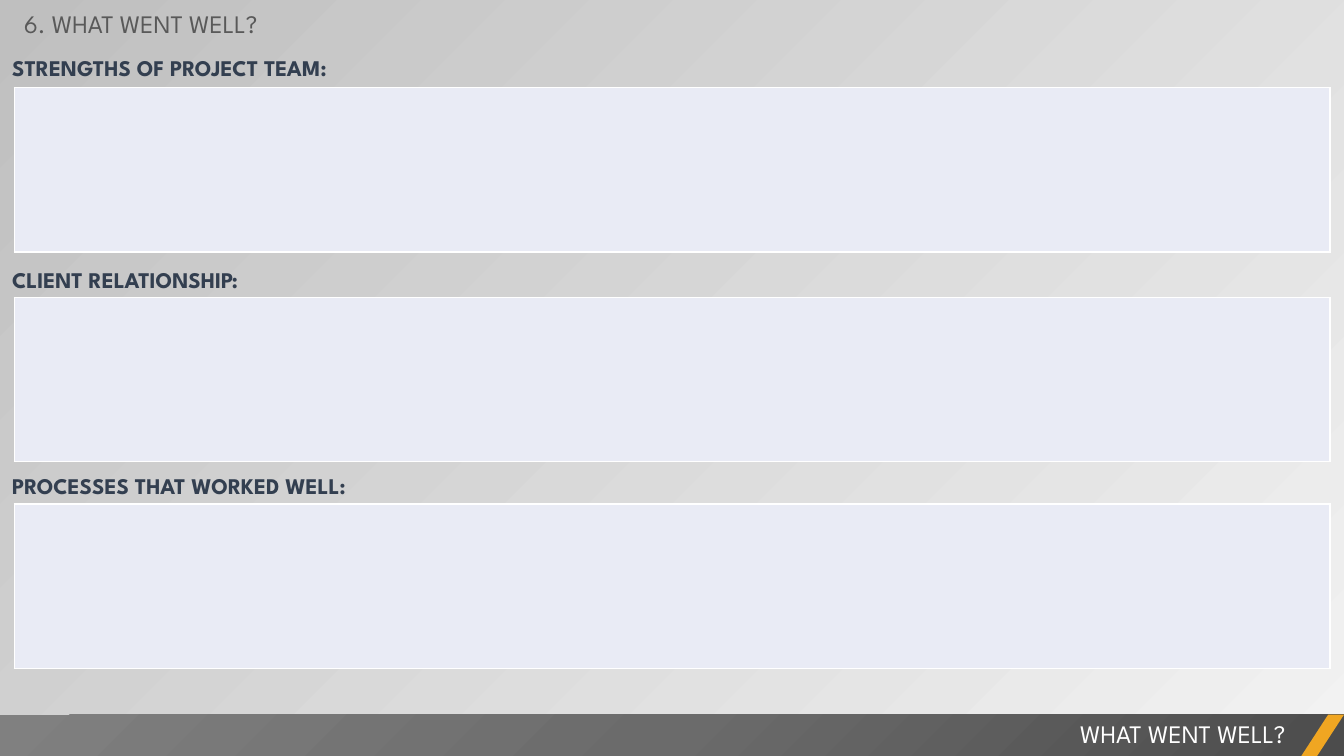
"""Build the "What went well?" slide: three titled answer boxes above a footer bar."""
from lxml import etree
from pptx import Presentation
from pptx.dml.color import RGBColor
from pptx.enum.shapes import MSO_SHAPE
from pptx.enum.text import MSO_AUTO_SIZE, PP_ALIGN
from pptx.oxml import parse_xml
from pptx.oxml.ns import nsdecls, qn
from pptx.util import Inches, Pt

RECTANGLE = MSO_SHAPE.RECTANGLE
PARALLELOGRAM = MSO_SHAPE.PARALLELOGRAM
GROW = MSO_AUTO_SIZE.SHAPE_TO_FIT_TEXT
LEFT, RIGHT = PP_ALIGN.LEFT, PP_ALIGN.RIGHT

FONT = "League Spartan"
NAVY = RGBColor(0x33, 0x3F, 0x50)
GRAY = RGBColor(0x59, 0x59, 0x59)
WHITE = RGBColor(0xFF, 0xFF, 0xFF)
PALE_BLUE = RGBColor(0xE9, 0xEB, 0xF5)
AMBER = RGBColor(0xF0, 0xA6, 0x22)

SLIDE_WIDTH, SLIDE_HEIGHT = 13.33, 7.5
BOX_LEFT, BOX_WIDTH, BOX_HEIGHT = 0.14, 13.05, 1.63
FOOTER_TOP, FOOTER_HEIGHT = 7.09, 0.42
STRIPE_WIDTH = 0.43

TITLE = "6. WHAT WENT WELL?"
FOOTER = "WHAT WENT WELL?"
SECTIONS = [
    ("STRENGTHS OF PROJECT TEAM:", 0.45, 0.87, Pt(21.5)),
    ("CLIENT RELATIONSHIP:", 2.55, 2.95, Pt(21.5)),
    ("PROCESSES THAT WORKED WELL:", 4.57, 5.0, 1.2),
]
BACKGROUND_STOPS = [(0, "F2F2F2", 40), (100, "BFBFBF", 100)]
BACKGROUND_DIRECTION = '<a:lin ang="13500000" scaled="0"/>'
FOOTER_STOPS = [(0, "4C4C4C", 100), (50, "6B6B6B", 100), (100, "808080", 100)]
FOOTER_DIRECTION = '<a:path path="circle"><a:fillToRect l="100000" t="100000"/></a:path>'


def set_gradient(fill, element, stops, direction):
    fill.gradient()
    stop_xml = "".join(
        f'<a:gs pos="{position * 1000}"><a:srgbClr val="{color}">'
        f'<a:alpha val="{opacity * 1000}"/></a:srgbClr></a:gs>'
        for position, color, opacity in stops
    )
    gradient = parse_xml(
        f'<a:gradFill {nsdecls("a")} rotWithShape="1"><a:gsLst>{stop_xml}</a:gsLst>{direction}</a:gradFill>'
    )
    default = next(element.iter(qn("a:gradFill")))
    default.getparent().replace(default, gradient)


def add_text(slide, text, left, top, width, size, color, align=LEFT):
    shape = slide.shapes.add_textbox(Inches(left), Inches(top), Inches(width), Inches(0.4))
    frame = shape.text_frame
    frame.word_wrap = True
    frame.auto_size = GROW
    paragraph = frame.paragraphs[0]
    paragraph.text = text
    paragraph.alignment = align
    paragraph.font.name = FONT
    paragraph.font.size = Pt(size)
    paragraph.font.color.rgb = color
    return frame


def add_heading(slide, text, top, line_spacing):
    frame = add_text(slide, text, 0, top, 7.63, 16, NAVY)
    frame.margin_left = frame.margin_right = Inches(0.12)
    frame.margin_top = frame.margin_bottom = Inches(0.06)
    paragraph = frame.paragraphs[0]
    paragraph.font.bold = True
    paragraph.line_spacing = line_spacing
    paragraph.space_before = Pt(3.2)


def add_answer_box(slide, top):
    table = slide.shapes.add_table(
        1, 1, Inches(BOX_LEFT), Inches(top), Inches(BOX_WIDTH), Inches(BOX_HEIGHT)
    ).table
    table.first_row = table.horz_banding = False
    cell = table.cell(0, 0)
    properties = cell._tc.get_or_add_tcPr()
    for side in ("a:lnL", "a:lnR", "a:lnT", "a:lnB"):
        border = etree.SubElement(properties, qn(side), w=str(Pt(1)))
        solid = etree.SubElement(border, qn("a:solidFill"))
        etree.SubElement(solid, qn("a:srgbClr"), val=str(WHITE))
    cell.fill.solid()
    cell.fill.fore_color.rgb = PALE_BLUE


def add_footer_shape(slide, kind, left, width):
    shape = slide.shapes.add_shape(
        kind, Inches(left), Inches(FOOTER_TOP), Inches(width), Inches(FOOTER_HEIGHT)
    )
    shape.shadow.inherit = False
    shape.line.fill.background()
    return shape


def main():
    presentation = Presentation()
    presentation.slide_width = Inches(SLIDE_WIDTH)
    presentation.slide_height = Inches(SLIDE_HEIGHT)
    slide = presentation.slides.add_slide(presentation.slide_layouts[6])
    set_gradient(slide.background.fill, slide.element, BACKGROUND_STOPS, BACKGROUND_DIRECTION)

    for heading, heading_top, box_top, line_spacing in SECTIONS:
        add_answer_box(slide, box_top)
        add_heading(slide, heading, heading_top, line_spacing)

    bar = add_footer_shape(slide, RECTANGLE, 0, SLIDE_WIDTH)
    set_gradient(bar.fill, bar.element, FOOTER_STOPS, FOOTER_DIRECTION)
    add_text(slide, FOOTER, 5.25, 7.08, 7.6, 18, WHITE, RIGHT)
    stripe = add_footer_shape(slide, PARALLELOGRAM, SLIDE_WIDTH - STRIPE_WIDTH, STRIPE_WIDTH)
    stripe.adjustments[0] = 0.65
    stripe.fill.solid()
    stripe.fill.fore_color.rgb = AMBER

    add_text(slide, TITLE, 0.14, 0.03, 5.31, 18, GRAY)
    presentation.save("out.pptx")


if __name__ == "__main__":
    main()
